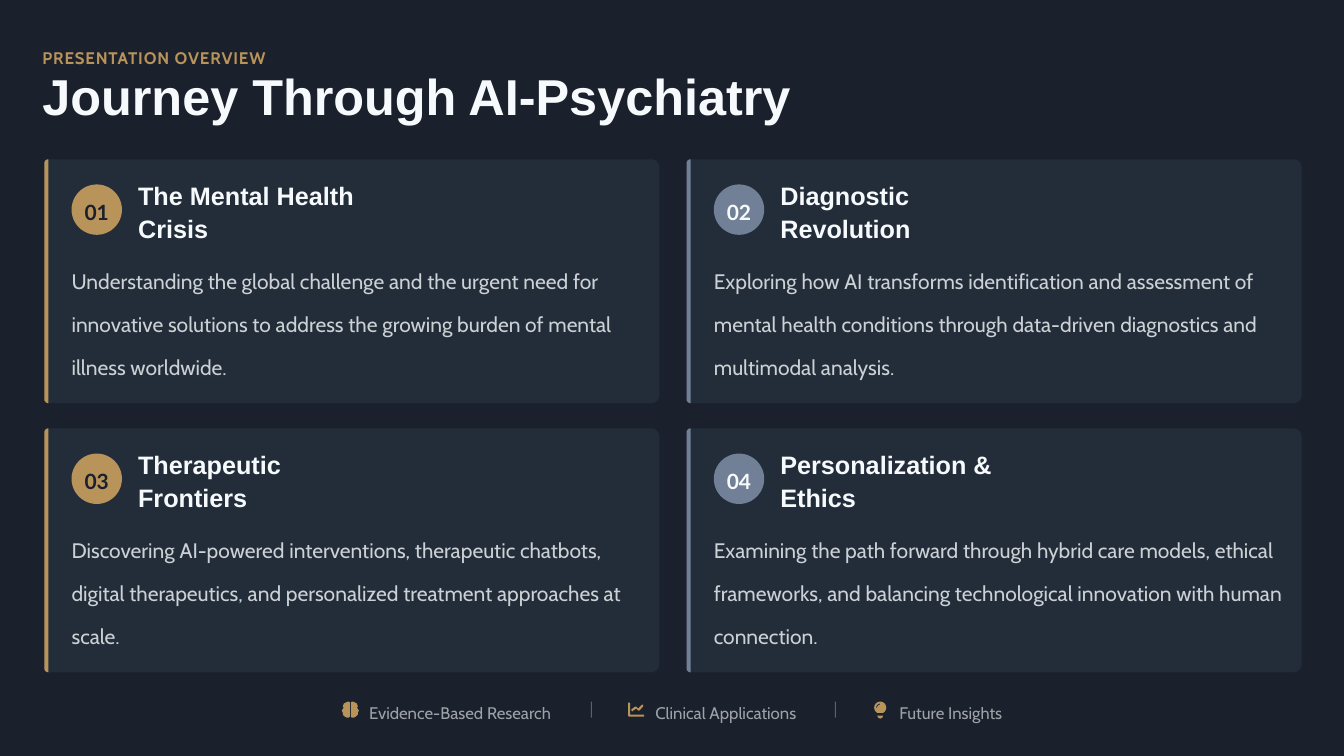
import math

from lxml import etree
from pptx import Presentation
from pptx import util as u
from pptx.dml.color import RGBColor
from pptx.enum import shapes, text
from pptx.oxml.ns import qn

THEME = {
    "night": "1A202C", "gold": "B8935A", "slate": "718096",
    "white": "F7FAFC", "card": "4A6572",
    "eyebrow": 12, "title": 36, "number": 15, "heading": 18, "body": 15, "footer": 12,
    "sans": "Arial", "soft": "Cabin", "digits": "Lato",
}


def outline(contours, color, alpha=100):
    fb = None
    for contour in contours:
        points = [(u.Inches(x), u.Inches(y)) for x, y in contour]
        if fb is None:
            fb = s.shapes.build_freeform(*points[0], scale=1.0)
        else:
            fb.move_to(*points[0])
        fb.add_line_segments(points[1:], close=True)
    sp = fb.convert_to_shape()
    sp.shadow.inherit = False
    sp.line.fill.background()
    sp.fill.solid()
    sp.fill.fore_color.rgb = RGBColor.from_string(THEME[color])
    clr = next(sp._element.iter(qn("a:srgbClr")))
    if alpha < 100:
        etree.SubElement(clr, qn("a:alpha"), val=str(alpha * 1000))


def write(sp, words, size, font, color, spacing, bold=False, alpha=100, tracking=0, center=False):
    tf = sp.text_frame
    tf.word_wrap = True
    tf.vertical_anchor = text.MSO_ANCHOR.MIDDLE
    tf.margin_left = tf.margin_right = tf.margin_top = tf.margin_bottom = 0
    p = tf.paragraphs[0]
    p.alignment = text.PP_ALIGN.CENTER if center else text.PP_ALIGN.LEFT
    p.line_spacing = spacing
    r = p.add_run()
    r.text = words
    r.font.size = u.Pt(THEME[size])
    r.font.name = THEME[font]
    r.font.bold = bold
    r.font.color.rgb = RGBColor.from_string(THEME[color])
    if tracking:
        r._r.get_or_add_rPr().set("spc", str(tracking))
    clr = next(r._r.iter(qn("a:srgbClr")))
    if alpha < 100:
        etree.SubElement(clr, qn("a:alpha"), val=str(alpha * 1000))


prs = Presentation()
prs.slide_width, prs.slide_height = u.Inches(13.33), u.Inches(7.5)
s = prs.slides.add_slide(prs.slide_layouts[6])
s.background.fill.solid()
s.background.fill.fore_color.rgb = RGBColor.from_string(THEME["night"])

sp = s.shapes.add_textbox(u.Inches(0.42), u.Inches(0.42), u.Inches(12.58), u.Inches(0.25))
write(sp, "PRESENTATION OVERVIEW", "eyebrow", "soft", "gold", 1.3, bold=True, tracking=60)
sp = s.shapes.add_textbox(u.Inches(0.42), u.Inches(0.75), u.Inches(12.75), u.Inches(0.5))
write(sp, "Journey Through AI-Psychiatry", "title", "sans", "white", 0.8, bold=True)

cards = [
    ("The Mental Health Crisis", 2.81,
     "Understanding the global challenge and the urgent need for innovative solutions "
     "to address the growing burden of mental illness worldwide."),
    ("Diagnostic Revolution", 2.52,
     "Exploring how AI transforms identification and assessment of mental health conditions "
     "through data-driven diagnostics and multimodal analysis."),
    ("Therapeutic Frontiers", 2.49,
     "Discovering AI-powered interventions, therapeutic chatbots, digital therapeutics, "
     "and personalized treatment approaches at scale."),
    ("Personalization & Ethics", 2.77,
     "Examining the path forward through hybrid care models, ethical frameworks, "
     "and balancing technological innovation with human connection."),
]
card_h = 2.42
for i, (heading, heading_w, body) in enumerate(cards):
    row, col = divmod(i, 2)
    x, y = 0.44 + 6.37 * col, 1.58 + 2.67 * row
    accent, digit_color = (("gold", "night"), ("slate", "white"))[col]

    for w, left_r, right_r, color, alpha in ((6.1, 0.04, 0.08, "card", 20), (0.04, 0.04, 0, accent, 100)):
        corners = [
            (x + left_r, y + left_r, left_r, 180),
            (x + w - right_r, y + right_r, right_r, 270),
            (x + w - right_r, y + card_h - right_r, right_r, 0),
            (x + left_r, y + card_h - left_r, left_r, 90),
        ]
        edge = [(cx + rad * math.cos(math.radians(start + turn)), cy + rad * math.sin(math.radians(start + turn)))
                for cx, cy, rad, start in corners for turn in range(0, 91, 15)]
        outline([edge], color, alpha)

    sp = s.shapes.add_shape(shapes.MSO_SHAPE.OVAL, u.Inches(x + 0.27), u.Inches(y + 0.25),
                            u.Inches(0.5), u.Inches(0.5))
    sp.shadow.inherit = False
    sp.line.fill.background()
    sp.fill.solid()
    sp.fill.fore_color.rgb = RGBColor.from_string(THEME[accent])
    write(sp, f"{i + 1:02}", "number", "digits", digit_color, 1.2, bold=True, center=True)

    sp = s.shapes.add_textbox(u.Inches(x + 0.93), u.Inches(y + 0.34), u.Inches(heading_w), u.Inches(0.33))
    write(sp, heading, "heading", "sans", "white", 1.1, bold=True)
    sp = s.shapes.add_textbox(u.Inches(x + 0.27), u.Inches(y + 0.92), u.Inches(5.69), u.Inches(1.25))
    write(sp, body, "body", "soft", "white", 1.7, alpha=80)

lobe = [(3.43, 6.97), (3.45, 6.96), (3.46, 6.96), (3.47, 6.97), (3.47, 7.11), (3.46, 7.12), (3.44, 7.12),
        (3.42, 7.11), (3.4, 7.09), (3.4, 7.07), (3.39, 7.05), (3.41, 7.02), (3.4, 7.01), (3.41, 6.98)]
brain = [lobe, [(6.95 - px, py) for px, py in lobe]]
chart_axes = [(6.23, 6.97), (6.25, 6.97), (6.25, 7.09), (6.39, 7.09), (6.39, 7.11), (6.24, 7.11), (6.23, 7.1)]
chart_trend = [(6.38, 7.01), (6.38, 6.99), (6.37, 6.99), (6.33, 7.03), (6.31, 7.01), (6.3, 7.01),
               (6.26, 7.04), (6.27, 7.06), (6.28, 7.05), (6.31, 7.03), (6.33, 7.05), (6.34, 7.05)]
arcs = [(0.06, range(120, 421, 20)), (0.04, range(180, 271, 15)), (0.03, range(270, 179, -15))]
glass, glint_outer, glint_inner = [
    [(8.73 + rad * math.cos(math.radians(a)), 7.02 + rad * math.sin(math.radians(a))) for a in angles]
    for rad, angles in arcs]
bulb_base = [(8.7, 7.1), (8.76, 7.1), (8.75, 7.12), (8.73, 7.13), (8.71, 7.12)]
bulb = [glass, bulb_base, glint_outer + glint_inner]

footer = [
    (brain, 3.66, 1.95, "Evidence-Based Research"),
    ([chart_axes, chart_trend], 6.5, 1.53, "Clinical Applications"),
    (bulb, 8.92, 1.14, "Future Insights"),
]
for icon, x, w, words in footer:
    outline(icon, "gold")
    sp = s.shapes.add_textbox(u.Inches(x), u.Inches(6.92), u.Inches(w), u.Inches(0.25))
    write(sp, words, "footer", "soft", "white", 1.3, alpha=60)
for x in (5.86, 8.28):
    outline([[(x, 6.96), (x + 0.01, 6.96), (x + 0.01, 7.12), (x, 7.12)]], "white", 30)

prs.save("out.pptx")
